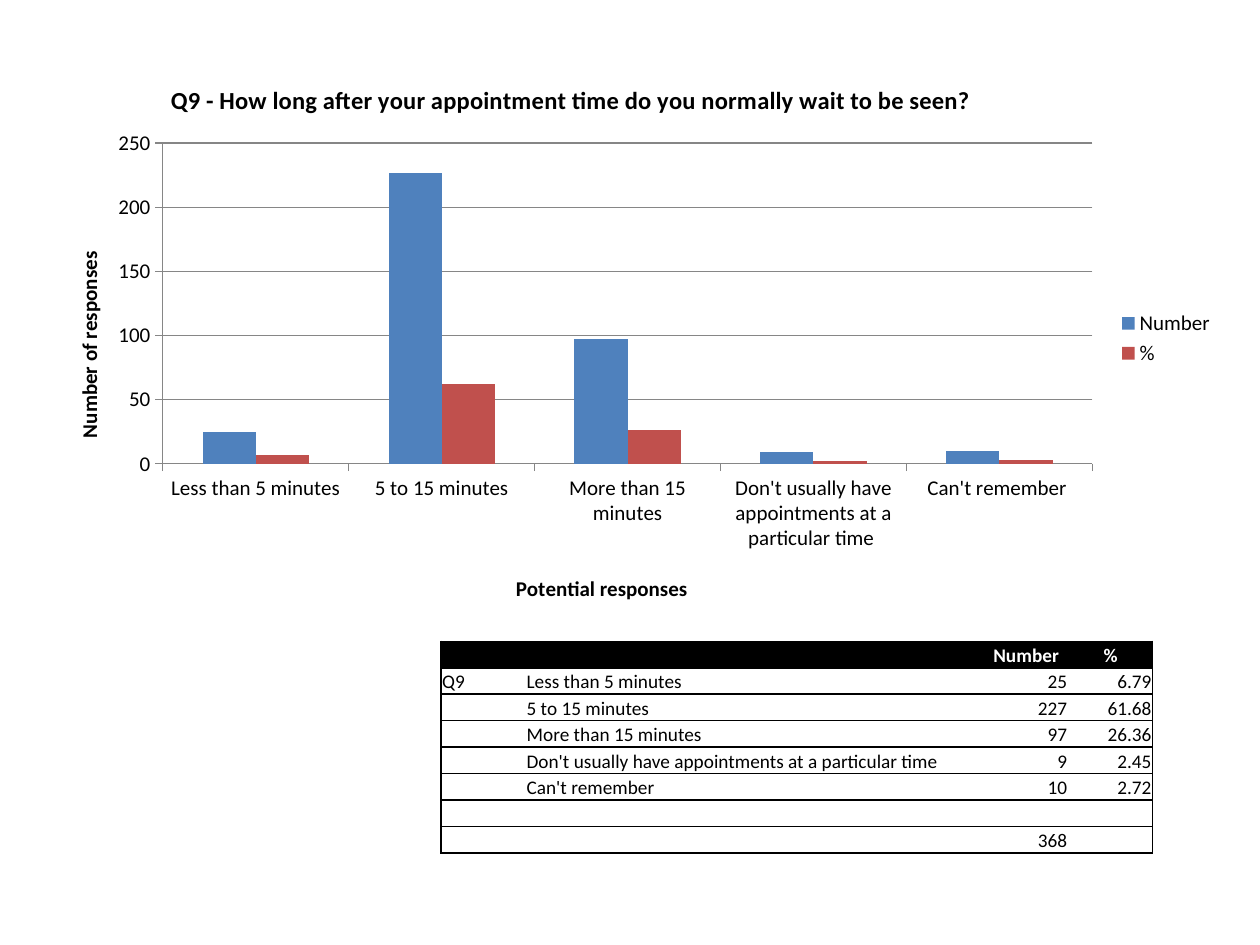
import pptx
import pptx.chart.data
import pptx.dml.color
import pptx.enum.chart
import pptx.enum.text
import pptx.oxml
import pptx.oxml.ns
import pptx.util

Inches, Pt = pptx.util.Inches, pptx.util.Pt
BLACK = pptx.dml.color.RGBColor(0x00, 0x00, 0x00)
WHITE = pptx.dml.color.RGBColor(0xFF, 0xFF, 0xFF)
GREY = pptx.dml.color.RGBColor(0x86, 0x86, 0x86)
BLUE = pptx.dml.color.RGBColor(0x4F, 0x81, 0xBD)
RED = pptx.dml.color.RGBColor(0xC0, 0x50, 0x4D)
FONT = "Calibri"


def place(part, index, **shares):
    """Fix a chart part at the given shares of the chart's size."""
    for old in part.findall(pptx.oxml.ns.qn("c:layout")):
        part.remove(old)
    target = '<c:layoutTarget val="inner"/>' if "w" in shares else ""
    modes = "".join(f'<c:{key}Mode val="edge"/>' for key in "xy")
    values = "".join(f'<c:{key} val="{share}"/>' for key, share in shares.items())
    part.insert(index, pptx.oxml.parse_xml(
        f'<c:layout {pptx.oxml.ns.nsdecls("c")}><c:manualLayout>'
        f"{target}{modes}{values}</c:manualLayout></c:layout>"))


def style(font, size, color=BLACK, bold=False):
    font.name, font.size, font.bold = FONT, Pt(size), bold
    font.color.rgb = color


deck = pptx.Presentation()
deck.slide_width, deck.slide_height = Inches(10), Inches(7.5)
slide = deck.slides.add_slide(deck.slide_layouts[6])

# Chart of responses
responses = pptx.chart.data.CategoryChartData()
responses.categories = [
    "Less than 5 minutes", "5 to 15 minutes", "More than 15 minutes",
    "Don't usually have appointments at a particular time ", "Can't remember "]
responses.add_series("Number", (25, 227, 97, 9, 10))
responses.add_series("%", (7, 62, 26, 2, 3))
chart = slide.shapes.add_chart(
    pptx.enum.chart.XL_CHART_TYPE.COLUMN_CLUSTERED,
    Inches(0.28), Inches(0.44), Inches(9.46), Inches(4.49), responses).chart
style(chart.font, 12)
bars = chart.plots[0]
bars.gap_width, bars.overlap, bars.vary_by_categories = 150, 0, False
for series, color in zip(bars.series, (BLUE, RED)):
    series.format.fill.solid()
    series.format.fill.fore_color.rgb = color

# Axes, legend and plot area
chart.has_legend = True
chart.legend.position = pptx.enum.chart.XL_LEGEND_POSITION.RIGHT
chart.legend.include_in_layout = False
style(chart.legend.font, 12)
counts = chart.value_axis
counts.maximum_scale, counts.minimum_scale, counts.major_unit = 250, 0, 50
counts.has_major_gridlines = True
for axis in (chart.category_axis, counts):
    axis.major_tick_mark = pptx.enum.chart.XL_TICK_MARK.OUTSIDE
    style(axis.tick_labels.font, 12)
for ruled in (chart.category_axis, counts, counts.major_gridlines):
    ruled.format.line.color.rgb = GREY
    ruled.format.line.width = Pt(0.75)
place(chart.element.chart.plotArea, 0, x=0.107, y=0.155, w=0.78, h=0.567)

# Chart and axis titles
for title, words, size, x, y in (
        (chart.chart_title,
         "Q9 - How long after your appointment time do you normally wait to be seen?",
         14, 0.11, 0.04),
        (chart.category_axis.axis_title, "Potential responses", 12, 0.4, 0.91),
        (counts.axis_title, "Number of responses", 12, 0.03, 0.34)):
    title.text_frame.text = words
    style(title.text_frame.paragraphs[0].runs[0].font, size, bold=True)
    place(title._element, 1, x=x, y=y)

# Table of results
results = [
    ("", "", "Number", "%"),
    ("Q9", "Less than 5 minutes", "25", "6.79"),
    ("", "5 to 15 minutes", "227", "61.68"),
    ("", "More than 15 minutes", "97", "26.36"),
    ("", "Don't usually have appointments at a particular time", "9", "2.45"),
    ("", "Can't remember", "10", "2.72"),
    ("", "", "", ""),
    ("", "", "368", "")]
widths = (0.67, 3.64, 0.67, 0.67)
row_height = 0.21
table = slide.shapes.add_table(
    len(results), len(widths), Inches(3.5), Inches(5.09),
    Inches(sum(widths)), Inches(row_height * len(results))).table
table.horz_banding = False
for column, width in zip(table.columns, widths):
    column.width = Inches(width)
align = pptx.enum.text.PP_ALIGN
for r, row in enumerate(results):
    table.rows[r].height = Inches(row_height)
    for c, words in enumerate(row):
        cell = table.cell(r, c)
        cell.margin_left = cell.margin_right = cell.margin_top = Inches(0.01)
        cell.margin_bottom = 0
        cell.vertical_anchor = pptx.enum.text.MSO_ANCHOR.BOTTOM
        cell.fill.solid()
        cell.fill.fore_color.rgb = WHITE if r else BLACK
        line = cell.text_frame.paragraphs[0]
        if words:
            line.text = words
            style(line.runs[0].font, 11, WHITE if r == 0 else BLACK, r == 0)
            if c > 1:
                line.alignment = align.RIGHT if r else align.CENTER
        else:
            line._p.append(pptx.oxml.parse_xml(
                f'<a:endParaRPr {pptx.oxml.ns.nsdecls("a")} sz="1100"/>'))
        # Rules run across every row; only the outer sides are closed
        drawn = {"L": c == 0, "R": c == len(widths) - 1, "T": True, "B": True}
        for i, (side, shown) in enumerate(drawn.items()):
            paint = (f'<a:solidFill><a:srgbClr val="{BLACK}"/></a:solidFill>'
                     if shown else "<a:noFill/>")
            cell._tc.get_or_add_tcPr().insert(i, pptx.oxml.parse_xml(
                f'<a:ln{side} {pptx.oxml.ns.nsdecls("a")} w="{Pt(1)}">{paint}</a:ln{side}>'))

deck.save("out.pptx")
